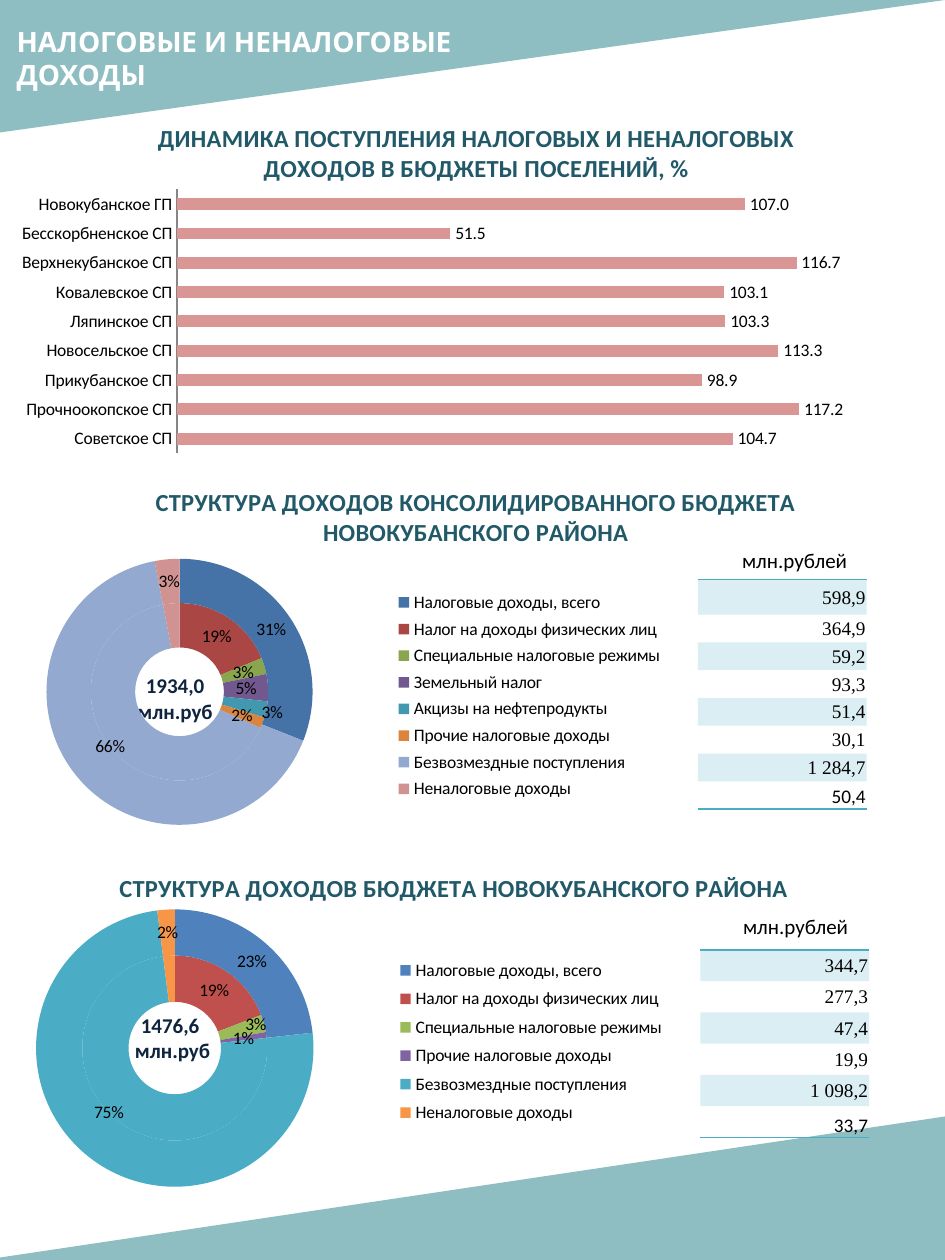
"""Builds a portrait slide on tax and non-tax revenues with three charts and two tables."""
from lxml import etree
from pptx import Presentation
from pptx import util as u
from pptx.chart.data import CategoryChartData
from pptx.dml.color import RGBColor
from pptx.enum import chart as ch, shapes, text
from pptx.oxml.ns import qn

COLORS = {"teal": "519AA0", "white": "FFFFFF", "navy": "0F243E", "black": "000000",
          "heading": "215968", "aqua": "4BACC6", "rose": "D99694", "axis": "868686"}
MUTED_RING = ["4572A7", "AA4643", "89A54E", "71588F", "4198AF", "DB843D", "93A9CF", "D19392"]
BRIGHT_RING = ["4F81BD", "C0504D", "9BBB59", "8064A2", "4BACC6", "F79646"]
ALIGN = text.PP_ALIGN


def write(frame, content, font="Calibri", size=12, color="black", bold=False, align=ALIGN.LEFT):
    frame.text = content
    for paragraph in frame.paragraphs:
        paragraph.alignment = align
        for run in paragraph.runs:
            run.font.name, run.font.size, run.font.bold = font, u.Pt(size), bold
            run.font.color.rgb = RGBColor.from_string(COLORS[color])


def arrange(parent, index, fractions, inner=False, edge=True):
    for previous in parent.findall(qn("c:layout")):
        parent.remove(previous)
    layout = etree.Element(qn("c:layout"))
    manual = etree.SubElement(layout, qn("c:manualLayout"))
    settings = [("layoutTarget", "inner")] if inner else []
    settings += [("xMode", "edge"), ("yMode", "edge")] if edge else []
    for tag, value in settings + list(zip("xywh", fractions)):
        etree.SubElement(manual, qn(f"c:{tag}"), val=str(value))
    parent.insert(index, layout)


prs = Presentation()
prs.slide_width, prs.slide_height = u.Cm(19.05), u.Cm(25.4)
slide = prs.slides.add_slide(prs.slide_layouts[5])

for box, flip in [((0, 0, 19.05, 2.67), "flipH"), ((-0.33, 22.5, 19.43, 2.9), "flipV")]:
    wedge = slide.shapes.add_shape(shapes.MSO_SHAPE.RIGHT_TRIANGLE, *map(u.Cm, box))
    wedge.rotation = 180
    wedge._element.spPr.xfrm.set(flip, "1")
    wedge.shadow.inherit = False
    wedge.line.fill.background()
    wedge.fill.solid()
    wedge.fill.fore_color.rgb = RGBColor.from_string(COLORS["teal"])
    tint = next(wedge._element.spPr.iter(qn("a:srgbClr")))
    etree.SubElement(tint, qn("a:alpha"), val="64000")

heading = slide.shapes.title
heading.left, heading.top, heading.width, heading.height = map(u.Cm, (0.08, 0.36, 11.46, 1.63))
write(heading.text_frame, "НАЛОГОВЫЕ И НЕНАЛОГОВЫЕ ДОХОДЫ", font="Karla", size=16, color="white", bold=True)
heading.text_frame.vertical_anchor = text.MSO_ANCHOR.TOP
heading.text_frame.auto_size = text.MSO_AUTO_SIZE.NONE
heading.text_frame.word_wrap = True
slide.shapes._spTree.append(heading._element)

for content, box, wrap, style in [
    ("1934,0 млн.руб", (2.41, 13.44, 2.24, 1.27), True, dict(color="navy", bold=True, align=ALIGN.CENTER)),
    ("1476,6\n млн.руб", (2.31, 20.29, 2.24, 1.27), True, dict(color="navy", bold=True, align=ALIGN.CENTER)),
    ("млн.рублей", (14.71, 10.92, 2.72, 0.76), False, {}),
    ("млн.рублей", (14.73, 18.29, 2.72, 0.76), False, {}),
]:
    caption = slide.shapes.add_textbox(*map(u.Cm, box))
    caption.text_frame.word_wrap = wrap
    write(caption.text_frame, content, **style)

for amounts, left, top, first_height, row_height in [
    (["598,9", "364,9", "59,2", "93,3", "51,4", "30,1", "1 284,7", "50,4"], 14.07, 11.68, 0.71, 0.56),
    (["344,7", "277,3", "47,4", "19,9", "1 098,2", "33,7"], 14.12, 19.15, 0.63, 0.63),
]:
    last = len(amounts) - 1
    total_height = first_height + last * row_height
    sums = slide.shapes.add_table(len(amounts), 1, *map(u.Cm, (left, top, 3.4, total_height))).table
    sums.first_row = sums.horz_banding = False
    sums._tbl.tblPr.find(qn("a:tableStyleId")).text = "{2D5ABB26-0587-4C30-8999-92F81FD0307C}"
    for row, amount in enumerate(amounts):
        sums.rows[row].height = u.Cm(row_height if row else first_height)
        cell = sums.cell(row, 0)
        cell.margin_left = cell.margin_right = cell.margin_top = u.Cm(0.02)
        cell.margin_bottom = 0
        cell.vertical_anchor = text.MSO_ANCHOR.BOTTOM if row == last else text.MSO_ANCHOR.MIDDLE
        write(cell.text_frame, amount, font="Calibri" if row == last else "Times New Roman",
              size=11, align=ALIGN.RIGHT)
        properties = cell._tc.get_or_add_tcPr()
        if row % 2:
            cell.fill.background()
        else:
            cell.fill.solid()
            cell.fill.fore_color.rgb = RGBColor.from_string(COLORS["aqua"])
            etree.SubElement(next(properties.iter(qn("a:srgbClr"))), qn("a:alpha"), val="20000")
        if row in (0, last):
            border = etree.Element(qn("a:lnB" if row else "a:lnT"), w="12700")
            stroke = etree.SubElement(border, qn("a:solidFill"))
            etree.SubElement(stroke, qn("a:srgbClr"), val=COLORS["aqua"])
            properties.insert(0, border)

settlements = ["Новокубанское ГП", "Бесскорбненское СП", "Верхнекубанское СП", "Ковалевское СП",
               "Ляпинское СП", "Новосельское СП", "Прикубанское СП", "Прочноокопское СП", "Советское СП"]
taxes = ["Налоговые доходы, всего", "Налог на доходы физических лиц", "Специальные налоговые режимы"]
others = ["Прочие налоговые доходы", "Безвозмездные поступления", "Неналоговые доходы"]
charts = []
for kind, title, box, title_at, plot_at, categories, rows in [
    (ch.XL_CHART_TYPE.BAR_CLUSTERED,
     "ДИНАМИКА ПОСТУПЛЕНИЯ НАЛОГОВЫХ И НЕНАЛОГОВЫХ ДОХОДОВ В БЮДЖЕТЫ ПОСЕЛЕНИЙ, %",
     (0.08, 1.9, 18.85, 7.39), (0.16, 0.06), (0.185, 0.26, 0.795, 0.72), settlements,
     [(107, 51.5, 116.7, 103.1, 103.3, 113.3, 98.9, 117.2, 104.7)]),
    (ch.XL_CHART_TYPE.DOUGHNUT,
     "СТРУКТУРА ДОХОДОВ КОНСОЛИДИРОВАННОГО БЮДЖЕТА НОВОКУБАНСКОГО РАЙОНА",
     (0, 9.27, 19.05, 7.62), (0.16, 0.055), (0.049, 0.262, 0.282, 0.704),
     taxes + ["Земельный налог", "Акцизы на нефтепродукты"] + others,
     [(None, 19, 3, 5, 3, 2, 66, 3), (31, None, None, None, None, None, 66, 3)]),
    (ch.XL_CHART_TYPE.DOUGHNUT, "СТРУКТУРА ДОХОДОВ БЮДЖЕТА НОВОКУБАНСКОГО РАЙОНА",
     (0.08, 16.89, 18.97, 8.2), (0.118, 0.07), (0.034, 0.176, 0.295, 0.682), taxes + others,
     [(None, 19, 3, 1, 74, 2), (23, None, None, None, 74, 2)]),
]:
    figures = CategoryChartData()
    figures.categories = categories
    for number, values in enumerate(rows, 1):
        figures.add_series(f"Series {number}", values)
    chart = slide.shapes.add_chart(kind, *map(u.Cm, box), figures).chart
    chart.font.name, chart.font.size = "Calibri", u.Pt(10)
    chart.font.color.rgb = RGBColor.from_string(COLORS["black"])
    chart.has_legend = False
    chart.has_title = True
    write(chart.chart_title.text_frame, title, size=14, color="heading", bold=True, align=ALIGN.CENTER)
    arrange(chart.chart_title._element, 1, title_at)
    arrange(chart._chartSpace.chart.plotArea, 0, plot_at, inner=True)
    backdrop = etree.Element(qn("c:spPr"))
    etree.SubElement(backdrop, qn("a:noFill"))
    chart._chartSpace.chart.addnext(backdrop)
    charts.append(chart)

dynamics, *rings = charts
bars = dynamics.plots[0]
bars.gap_width, bars.overlap, bars.vary_by_categories = 150, -25, False
bars.series[0].format.fill.solid()
bars.series[0].format.fill.fore_color.rgb = RGBColor.from_string(COLORS["rose"])
bar_labels = bars.series[0].data_labels
bar_labels.show_value = True
bar_labels.number_format, bar_labels.number_format_is_linked = "#,##0.0", False
dynamics.category_axis.reverse_order = True
dynamics.category_axis.major_tick_mark = ch.XL_TICK_MARK.NONE
dynamics.category_axis.format.line.color.rgb = RGBColor.from_string(COLORS["axis"])
dynamics.value_axis.visible = dynamics.value_axis.has_major_gridlines = False
dynamics.value_axis.minimum_scale, dynamics.value_axis.maximum_scale = 0, 140

for ring, palette, legend_at, moved in [
    (rings[0], MUTED_RING, (0.41, 0.333, 0.3, 0.582), {(0, 4): (0.029, 0.019), (1, 6): (0.017, -0.042)}),
    (rings[1], BRIGHT_RING, (0.41, 0.28, 0.3, 0.442), {(0, 2): (0.015, -0.012), (1, 4): (0.006, -0.064)}),
]:
    ring.has_legend = True
    ring.legend.position = ch.XL_LEGEND_POSITION.RIGHT
    ring.legend.include_in_layout = False
    arrange(ring.legend._element, 1, legend_at)
    for level, series in enumerate(ring.plots[0].series):
        shares = series.data_labels
        shares.show_percentage, shares.show_value = True, False
        shares.number_format, shares.number_format_is_linked = "0%", False
        for index, shade in enumerate(palette):
            point = series.points[index]
            point.format.fill.solid()
            point.format.fill.fore_color.rgb = RGBColor.from_string(shade)
            hidden = level == 0 and index >= len(palette) - 2
            if hidden or (level, index) in moved:
                label = point.data_label._get_or_add_dLbl()
                label.find(qn("c:showVal")).set("val", "0")
                label.find(qn("c:showPercent")).set("val", "0" if hidden else "1")
                if not hidden:
                    arrange(label, 1, moved[level, index], edge=False)

prs.save("out.pptx")
